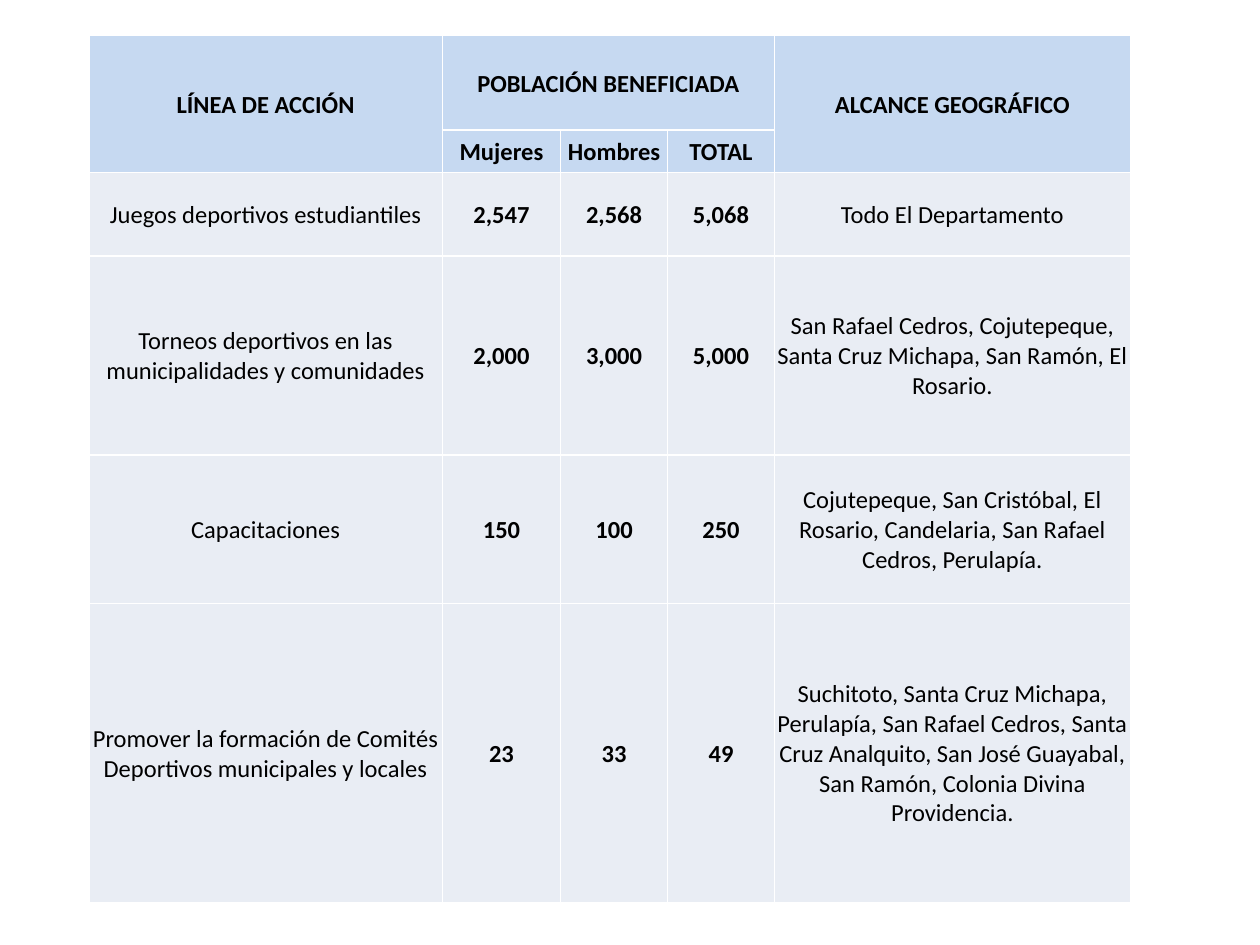
from lxml import etree
from pptx import Presentation
from pptx.dml.color import RGBColor
from pptx.enum.text import MSO_ANCHOR, PP_ALIGN
from pptx.oxml.ns import qn
from pptx.util import Cm, Pt

CENTER = PP_ALIGN.CENTER
MIDDLE = MSO_ANCHOR.MIDDLE

COLUMN_WIDTHS = [7.13, 2.38, 2.16, 2.15, 7.18]
ROW_HEIGHTS = [1.9, 0.86, 1.68, 4.01, 3, 6.02]
HEADER_ROWS = 2
NUMBER_COLUMNS = range(1, 4)
MERGES = [((0, 0), (1, 0)), ((0, 1), (0, 3)), ((0, 4), (1, 4))]
ROWS = [
    ["LÍNEA DE ACCIÓN", "POBLACIÓN BENEFICIADA", "", "", "ALCANCE GEOGRÁFICO"],
    ["", "Mujeres", "Hombres", "TOTAL", ""],
    ["Juegos deportivos estudiantiles", "2,547", "2,568", "5,068",
     "Todo El Departamento"],
    ["Torneos deportivos en las municipalidades y comunidades",
     "2,000", "3,000", "5,000",
     "San Rafael Cedros, Cojutepeque, Santa Cruz Michapa, San Ramón, El Rosario."],
    ["Capacitaciones", "150", "100", "250",
     "Cojutepeque, San Cristóbal, El Rosario, Candelaria, San Rafael Cedros, "
     "Perulapía."],
    ["Promover la formación de Comités Deportivos municipales y locales",
     "23", "33", "49",
     "Suchitoto, Santa Cruz Michapa, Perulapía, San Rafael Cedros, "
     "Santa Cruz Analquito, San José Guayabal, San Ramón, "
     "Colonia Divina Providencia."],
]


def color(value):
    return RGBColor.from_string(value)


def write(frame, text, font="Calibri", size=14, fill="000000", bold=False,
          align=CENTER):
    paragraph = frame.paragraphs[0]
    paragraph.alignment = align
    if text:
        run = paragraph.add_run()
        run.text = text
        run.font.name = font
        run.font.size = Pt(size)
        run.font.bold = bold
        run.font.color.rgb = color(fill)


class SlideBuilder:
    header_fill = "C6D9F1"
    body_fill = "E9EDF4"
    border_color = "FFFFFF"
    border_width = Pt(1)
    margin = Cm(0.03)

    def __init__(self, slide):
        self.slide = slide

    def borders(self, cell):
        properties = cell._tc.get_or_add_tcPr()
        for side in ("lnL", "lnR", "lnT", "lnB"):
            line = etree.SubElement(properties, qn(f"a:{side}"),
                                    w=str(self.border_width))
            fill = etree.SubElement(line, qn("a:solidFill"))
            etree.SubElement(fill, qn("a:srgbClr"), val=self.border_color)

    def cell(self, cell, text, fill, bold):
        cell.margin_left = cell.margin_right = cell.margin_top = self.margin
        cell.margin_bottom = 0
        cell.vertical_anchor = MIDDLE
        self.borders(cell)
        cell.fill.solid()
        cell.fill.fore_color.rgb = color(fill)
        write(cell.text_frame, text, bold=bold)

    def table(self, left, top, widths, heights, rows, merges):
        table = self.slide.shapes.add_table(
            len(heights), len(widths), Cm(left), Cm(top),
            Cm(sum(widths)), Cm(sum(heights))).table
        for column, width in zip(table.columns, widths):
            column.width = Cm(width)
        for row, height in zip(table.rows, heights):
            row.height = Cm(height)
        for first, last in merges:
            table.cell(*first).merge(table.cell(*last))
        for row_index, texts in enumerate(rows):
            header = row_index < HEADER_ROWS
            fill = self.header_fill if header else self.body_fill
            for column_index, text in enumerate(texts):
                self.cell(table.cell(row_index, column_index), text, fill,
                          bold=header or column_index in NUMBER_COLUMNS)


def main():
    presentation = Presentation()
    presentation.slide_width = Cm(25.4)
    presentation.slide_height = Cm(19.05)
    slide = presentation.slides.add_slide(presentation.slide_layouts[6])
    builder = SlideBuilder(slide)
    builder.table(1.79, 0.72, COLUMN_WIDTHS, ROW_HEIGHTS, ROWS, MERGES)
    presentation.save("out.pptx")


if __name__ == "__main__":
    main()
